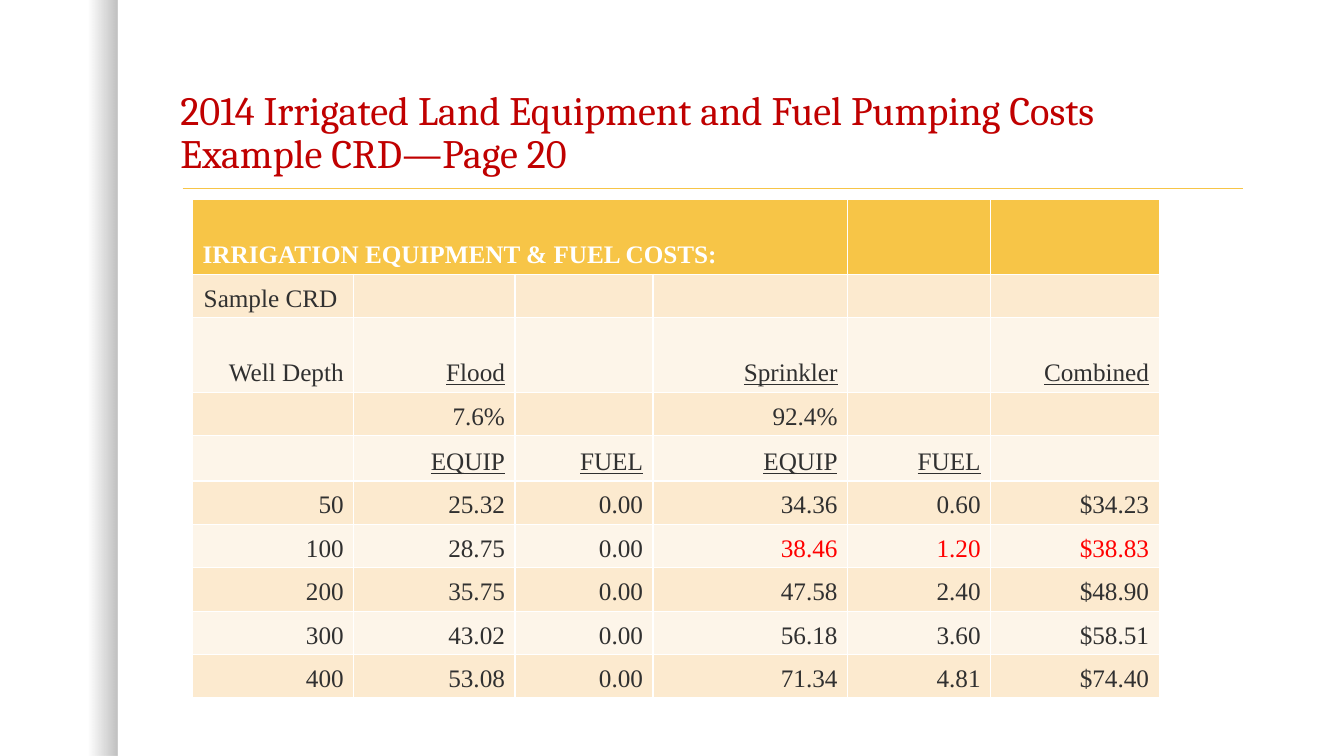
from lxml.etree import SubElement
from pptx import Presentation
from pptx.dml.color import RGBColor
from pptx.enum.shapes import MSO_CONNECTOR, MSO_SHAPE
from pptx.enum.text import MSO_ANCHOR, MSO_AUTO_SIZE, PP_ALIGN
from pptx.oxml.ns import qn
from pptx.util import Pt

BLACK = RGBColor(0x00, 0x00, 0x00)
WHITE = RGBColor(0xFF, 0xFF, 0xFF)
GOLD = RGBColor(0xF7, 0xC5, 0x47)
CRIMSON = RGBColor(0xC0, 0x00, 0x00)
RED = RGBColor(0xFF, 0x00, 0x00)
INK = RGBColor(0x30, 0x30, 0x30)
BAND_DARK = RGBColor(0xFC, 0xEA, 0xCF)
BAND_LIGHT = RGBColor(0xFD, 0xF5, 0xE9)

COL_WIDTHS = [115.2, 115.2, 98.6, 139, 102.2, 120.3]
ROW_HEIGHTS = [53.3, 31, 53.3, 31, 32.4] + [31] * 5
ROWS = [
    ["IRRIGATION EQUIPMENT & FUEL COSTS:", "", "", "", "", ""],
    ["Sample CRD\u00a0", "", "", "", "", ""],
    ["Well Depth", "Flood", "", "Sprinkler", "", "Combined"],
    ["", "7.6%", "", "92.4%", "", ""],
    ["", "EQUIP", "FUEL", "EQUIP", "FUEL", ""],
    ["50", "25.32", "0.00", "34.36", "0.60", "$34.23"],
    ["100", "28.75", "0.00", "38.46", "1.20", "$38.83"],
    ["200", "35.75", "0.00", "47.58", "2.40", "$48.90"],
    ["300", "43.02", "0.00", "56.18", "3.60", "$58.51"],
    ["400", "53.08", "0.00", "71.34", "4.81", "$74.40"],
]
UNDERLINED = {"Flood", "Sprinkler", "Combined", "EQUIP", "FUEL"}
HIGHLIGHTED = {"38.46", "1.20", "$38.83"}

prs = Presentation()
prs.slide_width, prs.slide_height = Pt(960), Pt(540)
s = prs.slides.add_slide(prs.slide_layouts[5])
s.background.fill.solid()
s.background.fill.fore_color.rgb = WHITE

# Shaded left edge
sp = s.shapes.add_shape(MSO_SHAPE.RECTANGLE, 0, 0, Pt(83.8), Pt(540))
sp.shadow.inherit = False
sp.line.fill.background()
sp.fill.gradient()
sp.fill.gradient_angle = 0
for stop, (position, alpha) in zip(sp.fill.gradient_stops, [(0.75, 0), (1, 25000)]):
    stop.position = position
    stop.color.rgb = BLACK
for clr in sp._element.spPr.iter(qn("a:srgbClr")):
    SubElement(clr, qn("a:alpha"), val="0" if clr.getparent().get("pos") == "75000" else str(alpha))

# Rule under the title
rule = s.shapes.add_connector(MSO_CONNECTOR.STRAIGHT, Pt(130.5), Pt(134.6), Pt(888), Pt(134.6))
rule.line.color.rgb = GOLD
rule.line.width = Pt(1)
SubElement(rule._element.spPr, qn("a:effectLst"))

# Title
title = s.shapes.title
title.left, title.top, title.width, title.height = Pt(121.7), Pt(36), Pt(776), Pt(94.3)
tf = title.text_frame
tf.word_wrap = True
tf.auto_size = MSO_AUTO_SIZE.NONE
tf.vertical_anchor = MSO_ANCHOR.BOTTOM
tf.text = "2014 Irrigated Land Equipment and Fuel Pumping Costs\vExample CRD—Page 20"
p = tf.paragraphs[0]
p.alignment = PP_ALIGN.LEFT
p.line_spacing = 0.9
for r in p.runs:
    r.font.name = "Cambria"
    r.font.size = Pt(28.8)
    r.font.color.rgb = CRIMSON

# Cost table
table = s.shapes.add_table(len(ROWS), len(COL_WIDTHS), Pt(137.5), Pt(142.6),
                           Pt(sum(COL_WIDTHS)), Pt(sum(ROW_HEIGHTS))).table
for column, width in zip(table.columns, COL_WIDTHS):
    column.width = Pt(width)
for row, height in zip(table.rows, ROW_HEIGHTS):
    row.height = Pt(height)
table.cell(0, 0).merge(table.cell(0, 3))

for i, values in enumerate(ROWS):
    header = i == 0
    band = GOLD if header else BAND_DARK if i % 2 else BAND_LIGHT
    for j, value in enumerate(values):
        cell = table.cell(i, j)
        cell.fill.solid()
        cell.fill.fore_color.rgb = band
        cell.vertical_anchor = MSO_ANCHOR.BOTTOM
        if not value:
            continue
        p = cell.text_frame.paragraphs[0]
        p.alignment = PP_ALIGN.LEFT if header else PP_ALIGN.RIGHT
        r = p.add_run()
        r.text = value
        font_format = {"name": "Times New Roman", "size": Pt(18), "bold": header,
                       "underline": value in UNDERLINED}
        for key, setting in font_format.items():
            setattr(r.font, key, setting)
        r.font.color.rgb = WHITE if header else RED if value in HIGHLIGHTED else INK

prs.save("out.pptx")
